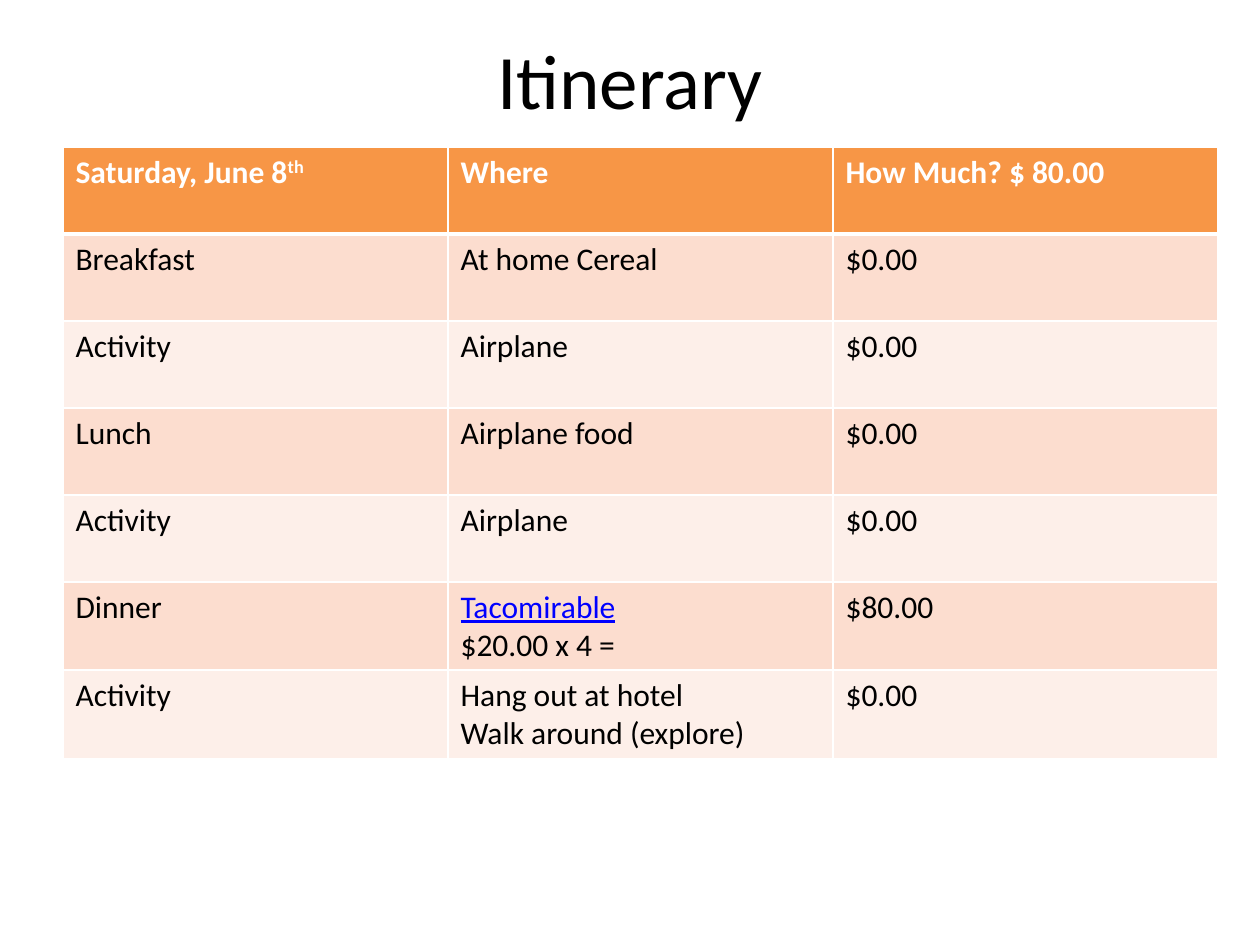
"""Build the Saturday itinerary slide with its budget table."""
from lxml import etree
from pptx import Presentation
from pptx import util as u
from pptx.dml.color import RGBColor
from pptx.enum import text
from pptx.oxml import ns

SCALE = 914400 / 126
COLORS = {"text": "000000", "white": "FFFFFF", "header": "F79646",
          "odd": "FCDDCF", "even": "FDEFE9", "link": "0000FF"}
ROWS = [
    ("Saturday, June 8", "Where", "How Much? $ 80.00"),
    ("Breakfast", "At home Cereal", "$0.00"),
    ("Activity", "Airplane", "$0.00"),
    ("Lunch", "Airplane food", "$0.00"),
    ("Activity", "Airplane", "$0.00"),
    ("Dinner", "Tacomirable\n$20.00 x 4 =", "$80.00"),
    ("Activity", "Hang out at hotel\nWalk around (explore)", "$0.00"),
]
RESTAURANT = "Tacomirable"


def px(length):
    return u.Emu(round(length * SCALE))


def add_span(para, words, size, color, bold=False):
    span = para.add_run()
    span.text = words
    span.font.name = "Calibri"
    span.font.size = u.Pt(size)
    span.font.bold = bold
    span.font.color.rgb = RGBColor.from_string(COLORS[color])
    return span


deck = Presentation()
deck.slide_width, deck.slide_height = px(1260), px(945)
page = deck.slides.add_slide(deck.slide_layouts[6])

title = page.shapes.add_textbox(px(63), px(0), px(1134), px(158)).text_frame
title.word_wrap = True
title.vertical_anchor = text.MSO_ANCHOR.MIDDLE
title.paragraphs[0].alignment = text.PP_ALIGN.CENTER
add_span(title.paragraphs[0], "Itinerary", 44, "text")

table = page.shapes.add_table(len(ROWS), 3, px(63), px(147), px(1155), px(609)).table
for column in table.columns:
    column.width = px(385)
for row in table.rows:
    row.height = px(87)

for row_index, entries in enumerate(ROWS):
    is_header = row_index == 0
    fill = "header" if is_header else ("even", "odd")[row_index % 2]
    for column_index, entry in enumerate(entries):
        cell = table.cell(row_index, column_index)
        properties = cell._tc.get_or_add_tcPr()
        widths = {"lnL": 1, "lnR": 1, "lnT": 3 if row_index == 1 else 1,
                  "lnB": 3 if is_header else 1}
        for side, width in widths.items():
            line = etree.SubElement(properties, ns.qn(f"a:{side}"), w=str(u.Pt(width)))
            solid = etree.SubElement(line, ns.qn("a:solidFill"))
            etree.SubElement(solid, ns.qn("a:srgbClr"), val=COLORS["white"])
        cell.fill.solid()
        cell.fill.fore_color.rgb = RGBColor.from_string(COLORS[fill])
        for line_index, words in enumerate(entry.split("\n")):
            frame = cell.text_frame
            para = frame.add_paragraph() if line_index else frame.paragraphs[0]
            color = "white" if is_header else "link" if words == RESTAURANT else "text"
            span = add_span(para, words, 18, color, is_header)
            if words == RESTAURANT:
                span.font.underline = True

ordinal = add_span(table.cell(0, 0).text_frame.paragraphs[0], "th", 18, "white", True)
ordinal.font._element.set("baseline", "30000")

deck.save("out.pptx")
